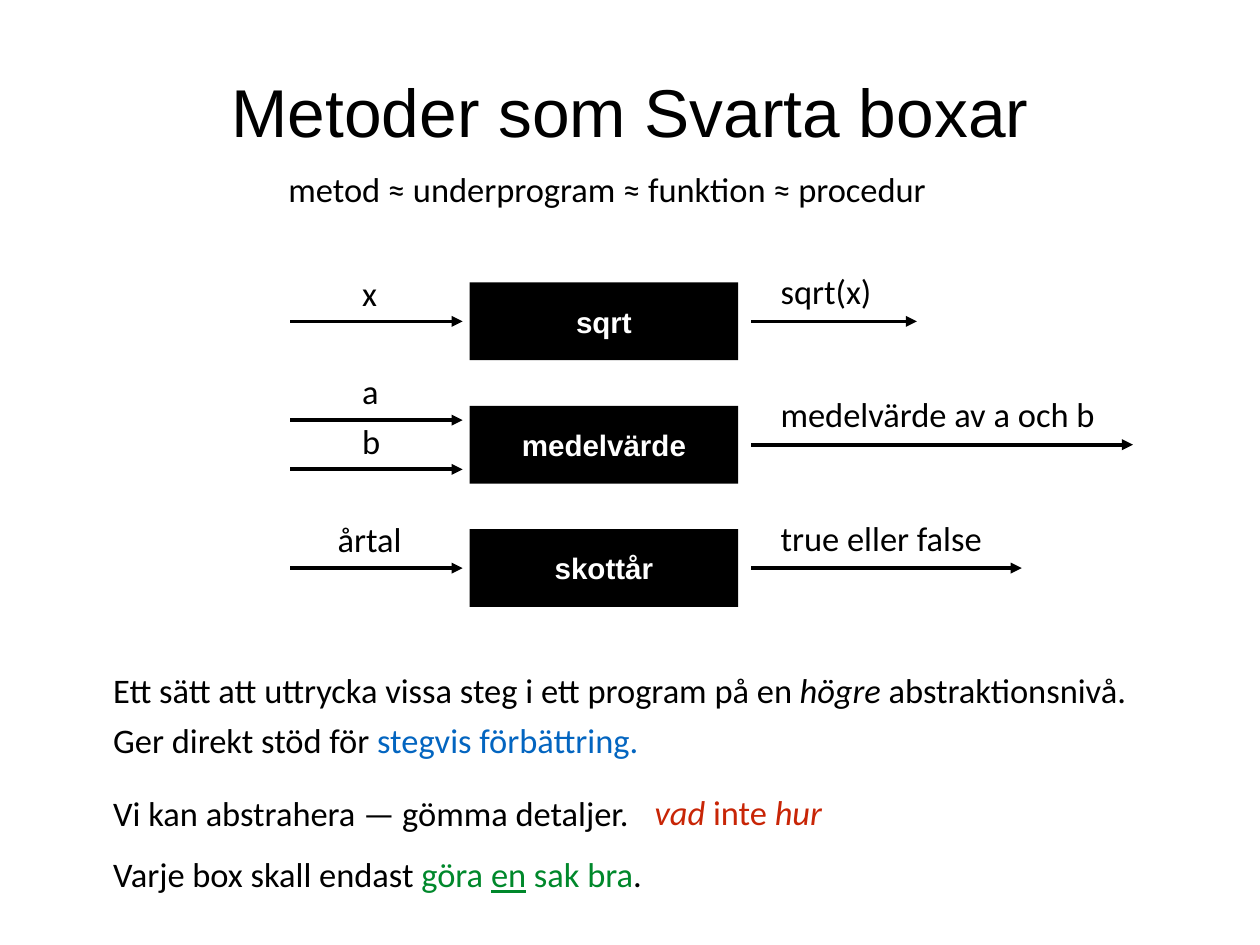
"""Build the slide that shows methods as black boxes with arrows in and out."""
from lxml import etree
from pptx import Presentation
from pptx.dml.color import RGBColor
from pptx.enum.shapes import MSO_CONNECTOR, MSO_SHAPE
from pptx.enum.text import MSO_ANCHOR, MSO_AUTO_SIZE, PP_ALIGN
from pptx.oxml.ns import qn
from pptx.util import Inches, Pt

STRAIGHT = MSO_CONNECTOR.STRAIGHT
RECTANGLE = MSO_SHAPE.RECTANGLE
TOP, MIDDLE = MSO_ANCHOR.TOP, MSO_ANCHOR.MIDDLE
NO_AUTOFIT = MSO_AUTO_SIZE.NONE
LEFT, CENTER = PP_ALIGN.LEFT, PP_ALIGN.CENTER

SLIDE_WIDTH, SLIDE_HEIGHT = 14.22, 10.67
COLUMNS, ROWS = 128, 96
TITLE_ONLY = 5
BLACK, WHITE, BLUE, RED, GREEN = "000000", "FFFFFF", "0365C0", "C82506", "00882B"

BOX_LEFT, BOX_WIDTH, BOX_HEIGHT = 47.7, 27.3, 7.9
FIRST_CENTER, BOX_STEP, INPUT_GAP = 32.65, 12.53, 5
INPUT_START, INPUT_END, OUTPUT_START = 29.5, 47, 76.3
LABEL_RISE, LABEL_LEFT, RESULT_LEFT = 5.05, 36.8, 79.3
TEXT_LEFT, LINE_HEIGHT = 11.5, 5.05

METHODS = [
    ("sqrt", [("x", LABEL_LEFT, 2.9)], "sqrt(x)", 10.9, 93.15),
    ("medelvärde", [("a", LABEL_LEFT, 2.9), ("b", LABEL_LEFT, 2.9)],
     "medelvärde av a och b", 32.8, 115.1),
    ("skottår", [("årtal", 33.8, 7.5)], "true eller false", 21.5, 103.8),
]
STATEMENTS = [
    (TEXT_LEFT, 68, 104.2, [
        ("Ett sätt att uttrycka vissa steg i ett program på en ", {}),
        ("högre", {"italic": True}), (" abstraktionsnivå.", {})]),
    (TEXT_LEFT, 73, 55.7, [
        ("Ger direkt stöd för ", {}), ("stegvis förbättring.", {"color": BLUE})]),
    (TEXT_LEFT, 80.45, 53.6, [("Vi kan abstrahera — gömma detaljer.", {})]),
    (66.5, 80.4, 18.2, [
        ("vad ", {"color": RED, "italic": True}), ("inte ", {"color": RED}),
        ("hur", {"color": RED, "italic": True})]),
    (TEXT_LEFT, 86.7, 55.7, [
        ("Varje box skall endast ", {}), ("göra ", {"color": GREEN}),
        ("en", {"color": GREEN, "underline": True}),
        (" sak bra", {"color": GREEN}), (".", {})]),
]


def rgb(color):
    """Return the colour for a hex string."""
    return RGBColor.from_string(color)


def across(columns):
    """Return the length of a number of grid columns."""
    return Inches(columns * SLIDE_WIDTH / COLUMNS)


def down(rows):
    """Return the length of a number of grid rows."""
    return Inches(rows * SLIDE_HEIGHT / ROWS)


def add_run(paragraph, text, size=28, font="Calibri", color=BLACK,
            bold=False, italic=False, underline=False):
    """Append formatted text to a paragraph."""
    run = paragraph.add_run()
    run.text = text
    run.font.size, run.font.name = Pt(size), font
    run.font.color.rgb = rgb(color)
    run.font.bold, run.font.italic, run.font.underline = bold, italic, underline


class BlackBoxSlide:
    """Hold the current slide and draw its elements in one style."""

    def __init__(self, presentation):
        """Add a title-only slide."""
        self.slide = presentation.slides.add_slide(
            presentation.slide_layouts[TITLE_ONLY])
        self.shapes = self.slide.shapes

    def fill_frame(self, shape, pieces, align=LEFT, anchor=TOP):
        """Write runs into a frame without margins."""
        frame = shape.text_frame
        frame.margin_left = frame.margin_right = 0
        frame.margin_top = frame.margin_bottom = 0
        frame.word_wrap, frame.auto_size = True, NO_AUTOFIT
        frame.vertical_anchor = anchor
        paragraph = frame.paragraphs[0]
        paragraph.alignment = align
        for text, style in pieces:
            add_run(paragraph, text, **style)

    def title(self, text):
        """Place the title across the top."""
        title = self.shapes.title
        title.left, title.top = across(0.6), down(0.6)
        title.width, title.height = across(126.8), down(21.2)
        self.fill_frame(title, [(text, {"size": 55, "font": "Arial"})],
                        CENTER, MIDDLE)

    def text(self, left, top, width, pieces, align=LEFT):
        """Add a line of text."""
        textbox = self.shapes.add_textbox(
            across(left), down(top), across(width), down(LINE_HEIGHT))
        self.fill_frame(textbox, pieces, align)

    def box(self, center, name):
        """Add a black box around a row centre."""
        box = self.shapes.add_shape(
            RECTANGLE, across(BOX_LEFT), down(center - BOX_HEIGHT / 2),
            across(BOX_WIDTH), down(BOX_HEIGHT))
        box.shadow.inherit = False
        box.fill.solid()
        box.fill.fore_color.rgb = rgb(BLACK)
        box.line.fill.background()
        style = {"size": 24, "font": "Arial", "color": WHITE, "bold": True}
        self.fill_frame(box, [(name, style)], CENTER, MIDDLE)

    def arrow(self, start, end, row):
        """Add a horizontal arrow."""
        arrow = self.shapes.add_connector(
            STRAIGHT, across(start), down(row), across(end), down(row))
        arrow.line.width = Pt(3)
        arrow.line.color.rgb = rgb(BLACK)
        line = arrow.line._get_or_add_ln()
        etree.SubElement(line, qn("a:tailEnd"), type="triangle")
        etree.SubElement(arrow._element.spPr, qn("a:effectLst"))

    def method(self, center, name, inputs, result, result_width, output_end):
        """Draw a method with its inputs and its result."""
        self.box(center, name)
        for index, (label, left, width) in enumerate(inputs):
            row = center + (index - (len(inputs) - 1) / 2) * INPUT_GAP
            self.arrow(INPUT_START, INPUT_END, row)
            self.text(left, row - LABEL_RISE, width, [(label, {})], CENTER if left != LABEL_LEFT else LEFT)
        self.arrow(OUTPUT_START, output_end, center)
        self.text(RESULT_LEFT, center - LABEL_RISE - 0.15, result_width, [(result, {})])


def main():
    """Build and save the presentation."""
    presentation = Presentation()
    presentation.slide_width = Inches(SLIDE_WIDTH)
    presentation.slide_height = Inches(SLIDE_HEIGHT)
    slide = BlackBoxSlide(presentation)
    slide.title("Metoder som Svarta boxar")
    slide.text(29.3, 17.1, 69.8,
               [("metod ≈ underprogram ≈ funktion ≈ procedur", {})])
    for index, method in enumerate(METHODS):
        slide.method(FIRST_CENTER + index * BOX_STEP, *method)
    for statement in STATEMENTS:
        slide.text(*statement)
    presentation.save("out.pptx")


if __name__ == "__main__":
    main()
